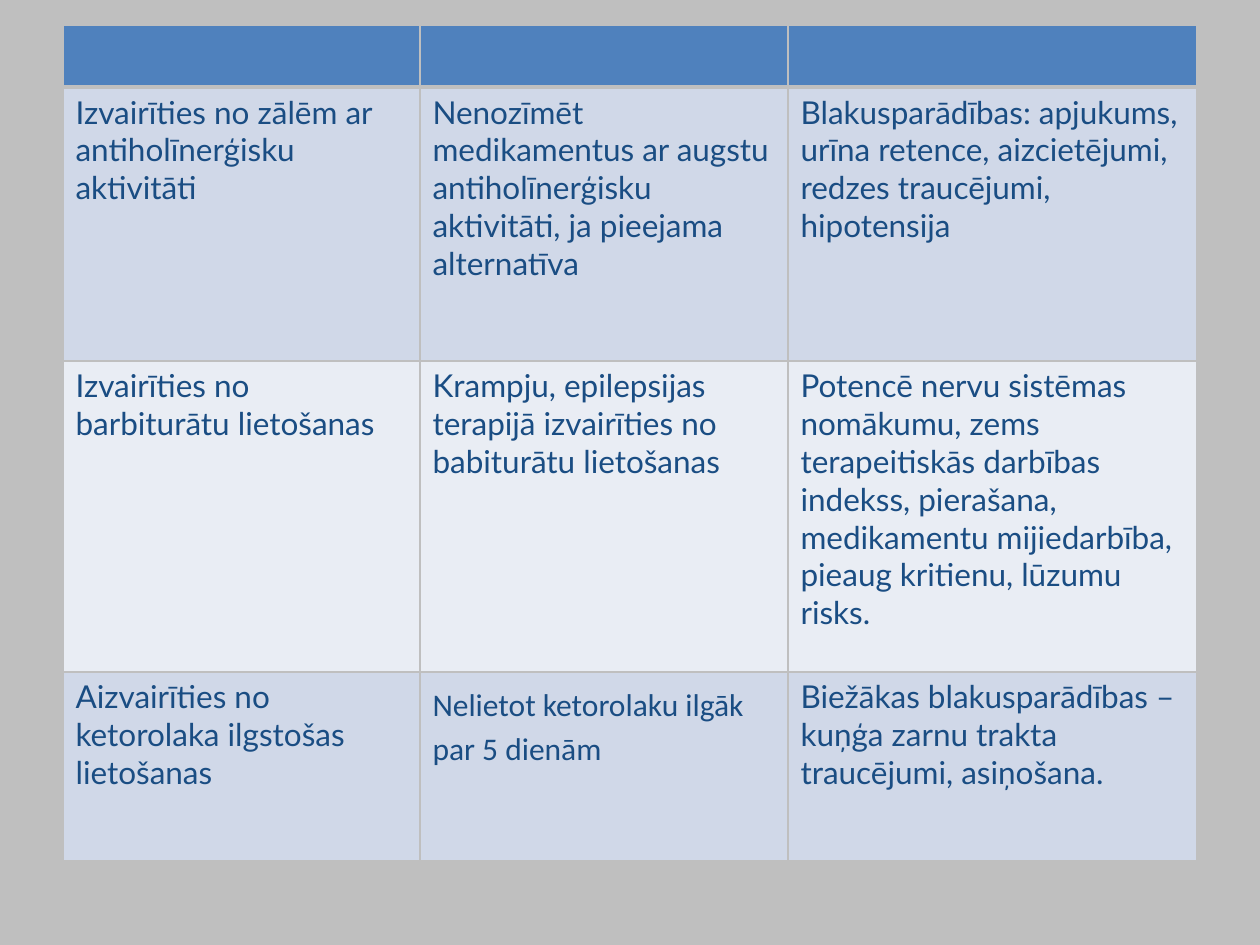
from dataclasses import dataclass

from lxml.etree import SubElement as Sub
from pptx import Presentation
from pptx.dml.color import RGBColor as Rgb
from pptx.oxml.ns import qn
from pptx.util import Pt

UNIT = 914400 / 126
GREY, HEAD, DARK, PALE, INK = "BFBFBF", "4F81BD", "D0D8E8", "E9EDF4", "1A4D83"
LEFT, TOP = 63, 25
COLS = [357, 368, 409]


@dataclass
class Cell:
    """Text of one cell with its font, line spacing and top inset."""
    text: str = ""
    font: str = "Lato"
    lead: float = 1.0
    inset: int = 6


@dataclass
class Row:
    """One table row: height, fill, bottom line in points, cells."""
    tall: int
    fill: str
    edge: int
    cells: list[Cell]


ROWS = [
    Row(62, HEAD, 3, [Cell(), Cell(), Cell()]),
    Row(274, DARK, 1, [
        Cell("Izvairīties no zālēm ar antiholīnerģisku aktivitāti"),
        Cell("Nenozīmēt medikamentus ar augstu antiholīnerģisku aktivitāti, "
             "ja pieejama alternatīva"),
        Cell("Blakusparādības: apjukums, urīna retence, aizcietējumi, "
             "redzes traucējumi, hipotensija"),
    ]),
    Row(311, PALE, 1, [
        Cell("Izvairīties no barbiturātu lietošanas"),
        Cell("Krampju, epilepsijas terapijā izvairīties no babiturātu lietošanas"),
        Cell("Potencē nervu sistēmas nomākumu, zems terapeitiskās darbības "
             "indekss, pierašana, medikamentu mijiedarbība, pieaug kritienu, "
             "lūzumu risks."),
    ]),
    Row(189, DARK, 1, [
        Cell("Aizvairīties no ketorolaka ilgstošas lietošanas"),
        Cell("Nelietot ketorolaku ilgāk par 5 dienām", "Calibri", 1.15, 9),
        Cell("Biežākas blakusparādības –kuņģa zarnu trakta traucējumi, asiņošana."),
    ]),
]


def px(size: int) -> int:
    """Turn px into EMU."""
    return round(size * UNIT)


def paint(fill, tone: str) -> None:
    """Give a fill one solid colour."""
    fill.solid()
    fill.fore_color.rgb = Rgb.from_string(tone)


def rule(box, edge: int) -> None:
    """Draw the four borders of a cell."""
    props = box._tc.get_or_add_tcPr()
    for side, wide in {"L": 1, "R": 1, "T": 1, "B": edge}.items():
        line = Sub(props, qn(f"a:ln{side}"), w=str(Pt(wide)))
        Sub(Sub(line, qn("a:solidFill")), qn("a:srgbClr"), val=GREY)


def write(box, cell: Cell) -> None:
    """Put styled text into a cell."""
    box.margin_top = px(cell.inset)
    para = box.text_frame.paragraphs[0]
    para.text = cell.text
    para.line_spacing = cell.lead
    look = {"name": cell.font, "size": Pt(18), "bold": False}
    for font in [para.font, *(run.font for run in para.runs)]:
        for key, val in look.items():
            setattr(font, key, val)
        paint(font.fill, INK)


def draw(slide) -> None:
    """Add the table and fill it row by row."""
    size = [px(LEFT), px(TOP), px(sum(COLS)), px(sum(r.tall for r in ROWS))]
    grid = slide.shapes.add_table(len(ROWS), len(COLS), *size).table
    for col, wide in zip(grid.columns, COLS):
        col.width = px(wide)
    for line, row in zip(grid.rows, ROWS):
        line.height = px(row.tall)
        for box, cell in zip(line.cells, row.cells):
            rule(box, row.edge)
            paint(box.fill, row.fill)
            write(box, cell)


def main() -> None:
    """Build and save the slide."""
    deck = Presentation()
    deck.slide_width, deck.slide_height = px(1260), px(945)
    slide = deck.slides.add_slide(deck.slide_layouts[6])
    paint(slide.background.fill, GREY)
    draw(slide)
    deck.save("out.pptx")


if __name__ == "__main__":
    main()
